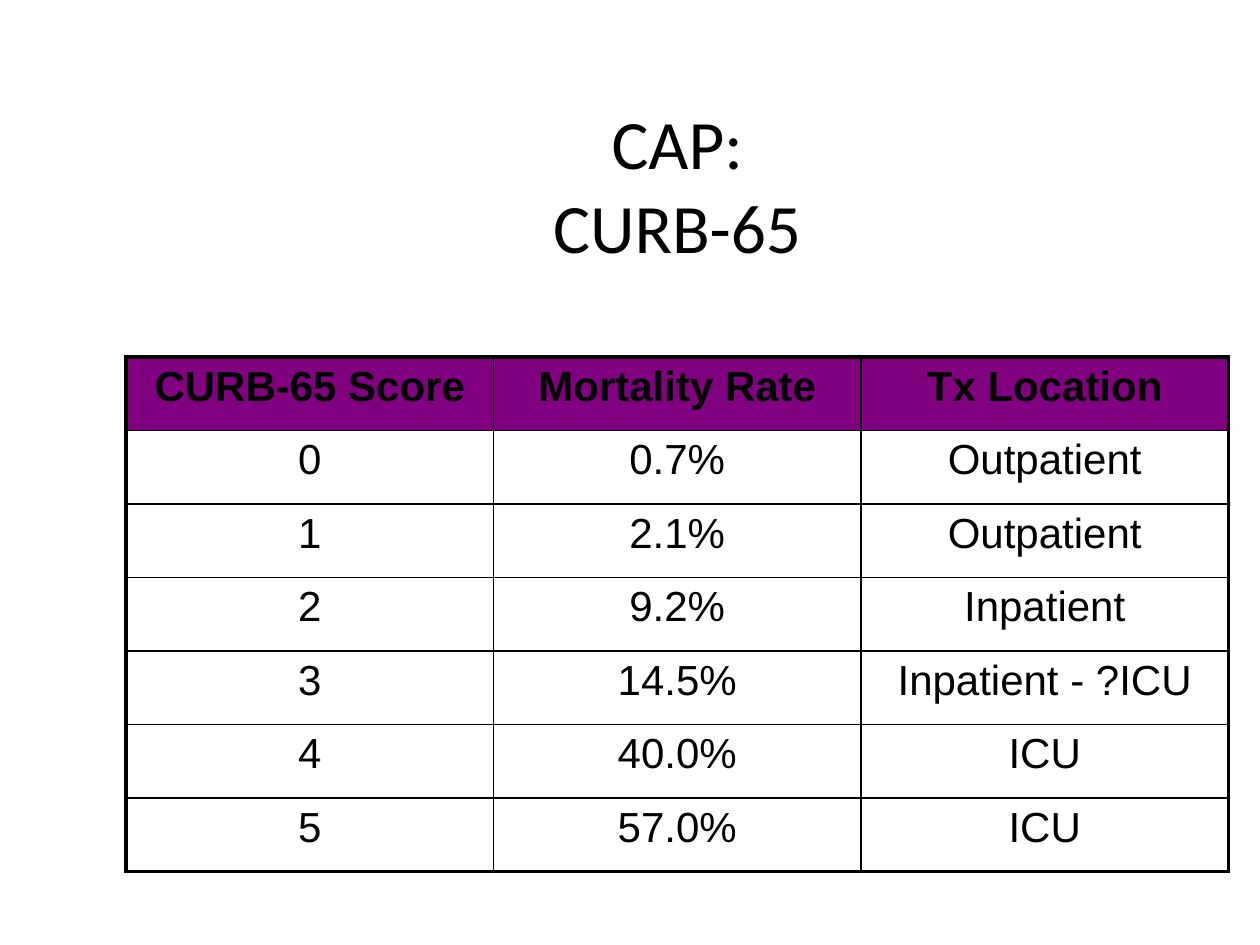
import pptx
import pptx.dml.color
import pptx.enum.text
import pptx.oxml.ns
import pptx.util
from lxml import etree

Pt = pptx.util.Pt
COLOURS = {"text": "000000", "border": "000000", "header": "800080"}
LEFT, WIDTH = 72, 630
TITLE_TOP, TITLE_HEIGHT = 60, 90
TABLE_TOP, ROW_HEIGHT = 204, 42
OUTER_LINE, INNER_LINE = 2.25, 1

SCORES = [
    ("CURB-65 Score", "Mortality Rate", "Tx Location"),
    ("0", "0.7%", "Outpatient"),
    ("1", "2.1%", "Outpatient"),
    ("2", "9.2%", "Inpatient"),
    ("3", "14.5%", "Inpatient - ?ICU"),
    ("4", "40.0%", "ICU"),
    ("5", "57.0%", "ICU"),
]


def colour(name):
    return pptx.dml.color.RGBColor.from_string(COLOURS[name])


def format_text(frame, **font_values):
    for paragraph in frame.paragraphs:
        paragraph.alignment = pptx.enum.text.PP_ALIGN.CENTER
        for run in paragraph.runs:
            run.font.color.rgb = colour("text")
            for attribute, value in font_values.items():
                setattr(run.font, attribute, value)


def add_title(slide, text):
    title = slide.shapes.title
    place = {"left": LEFT, "top": TITLE_TOP, "width": WIDTH, "height": TITLE_HEIGHT}
    for attribute, value in place.items():
        setattr(title, attribute, Pt(value))
    frame = title.text_frame
    frame.text = text
    frame.auto_size = pptx.enum.text.MSO_AUTO_SIZE.NONE
    frame.vertical_anchor = pptx.enum.text.MSO_ANCHOR.MIDDLE
    format_text(frame, name="Calibri", size=Pt(39.6), bold=False)


def set_borders(cell, widths):
    """Draw the cell's sides; widths maps L, R, T and B, in that order, to points."""
    qn = pptx.oxml.ns.qn
    properties = cell._tc.get_or_add_tcPr()
    for side, width in widths.items():
        line = etree.SubElement(properties, qn(f"a:ln{side}"), w=str(Pt(width)))
        fill = etree.SubElement(line, qn("a:solidFill"))
        etree.SubElement(fill, qn("a:srgbClr"), val=COLOURS["border"])


def add_score_table(slide, rows):
    row_count, column_count = len(rows), len(rows[0])
    table = slide.shapes.add_table(
        row_count, column_count, Pt(LEFT), Pt(TABLE_TOP),
        Pt(WIDTH), Pt(ROW_HEIGHT * row_count),
    ).table
    table.horz_banding = False
    for r, values in enumerate(rows):
        is_header = r == 0
        for c, value in enumerate(values):
            cell = table.cell(r, c)
            cell.text = value
            format_text(cell.text_frame, name="Arial", size=Pt(24), bold=is_header)
            on_edge = {
                "L": c == 0,
                "R": c == column_count - 1,
                "T": is_header,
                "B": r == row_count - 1,
            }
            set_borders(cell, {
                side: OUTER_LINE if outer else INNER_LINE
                for side, outer in on_edge.items()
            })
            if is_header:
                cell.fill.solid()
                cell.fill.fore_color.rgb = colour("header")
            else:
                cell.fill.background()


def main():
    deck = pptx.Presentation()
    deck.slide_width, deck.slide_height = Pt(720), Pt(540)
    slide = deck.slides.add_slide(deck.slide_layouts.get_by_name("Title Only"))
    add_title(slide, "CAP:\vCURB-65")
    add_score_table(slide, SCORES)
    deck.save("out.pptx")


if __name__ == "__main__":
    main()
